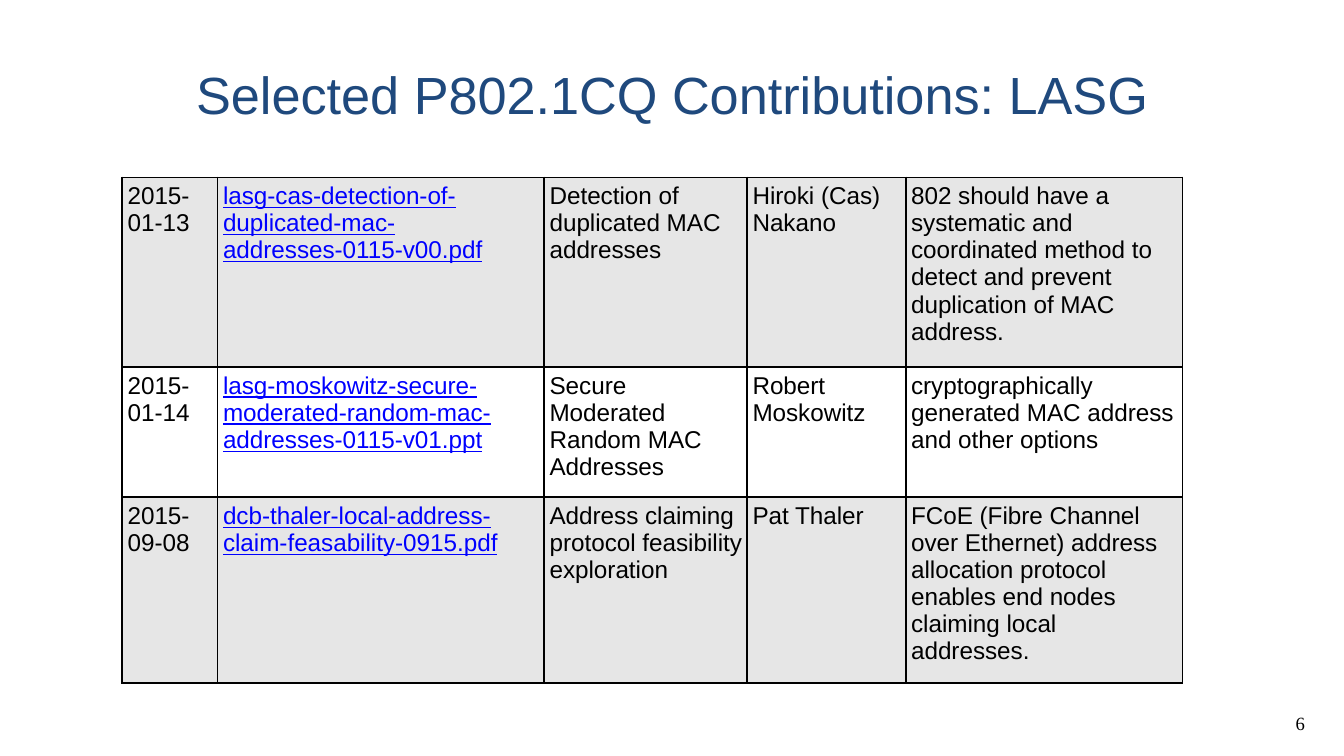
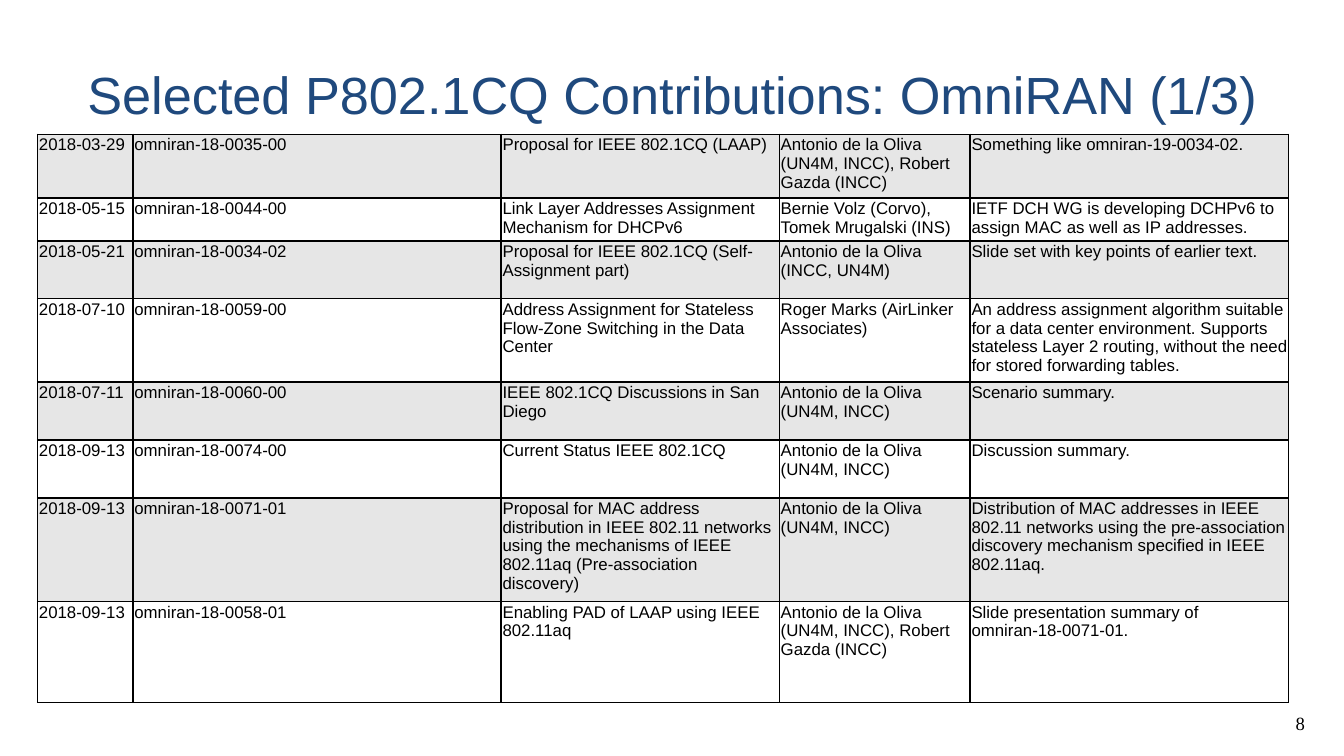
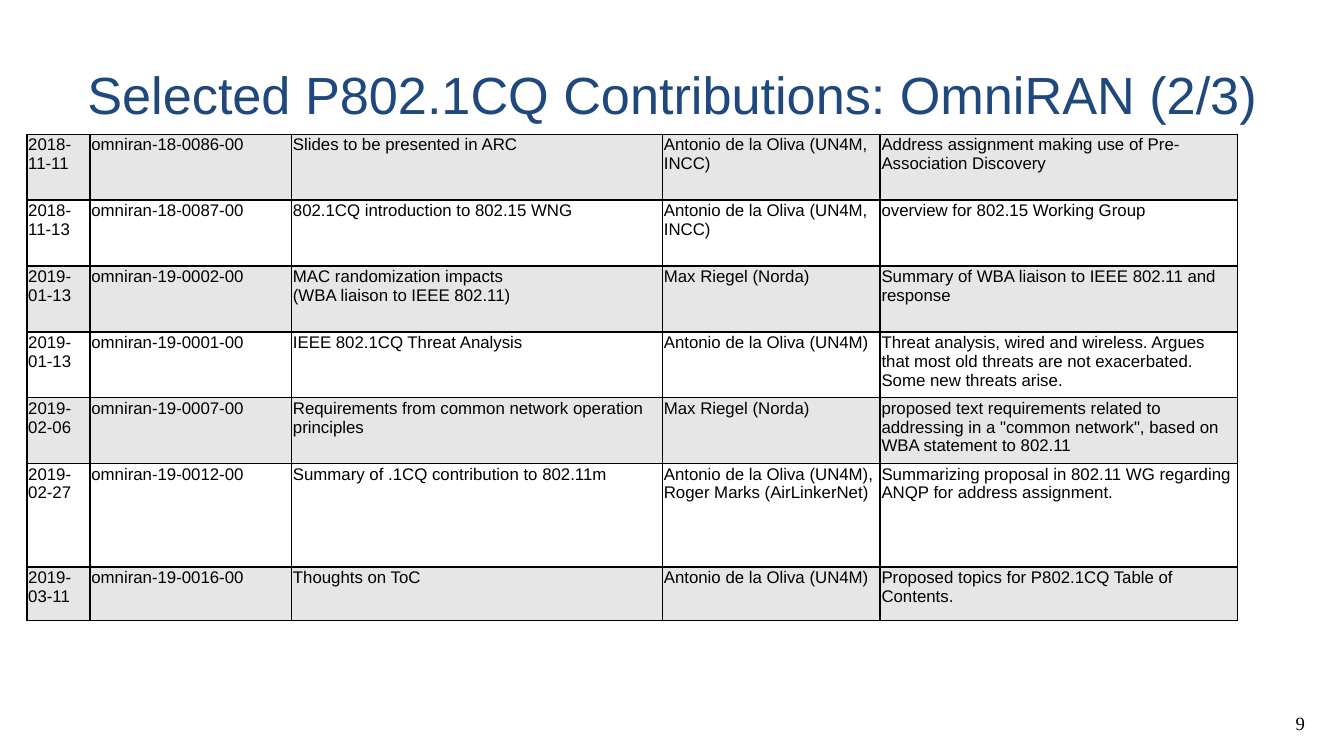
from itertools import product

from lxml.etree import SubElement
from pptx import Presentation
from pptx.dml.color import RGBColor
from pptx.enum.text import MSO_ANCHOR as Anchor, MSO_AUTO_SIZE as AutoSize, PP_ALIGN as Align
from pptx.oxml.ns import qn
from pptx.util import Inches, Pt

COLORS = {"title": "1F497D", "text": "000000", "link": "0000FF", "border": "000000",
          "odd": "E6E6E6", "even": "FFFFFF"}
FONTS = {"body": "Arial", "number": "Times New Roman"}
TITLE = "Selected P802.1CQ Contributions: "
WIDTH = 10
HEIGHT = WIDTH * 9 / 16
BOX_INSET = 0.05

LASG = [
    ("2015-01-13", "lasg-cas-detection-of-duplicated-mac-addresses-0115-v00.pdf",
     "Detection of\nduplicated MAC addresses", "Hiroki (Cas) Nakano",
     "802 should have a systematic and coordinated method to detect and prevent "
     "duplication of MAC address."),
    ("2015-01-14", "lasg-moskowitz-secure-moderated-random-mac-addresses-0115-v01.ppt",
     "Secure Moderated Random MAC Addresses", "Robert Moskowitz",
     "cryptographically generated MAC address and other options"),
    ("2015-09-08", "dcb-thaler-local-address-claim-feasability-0915.pdf",
     "Address claiming \nprotocol feasibility \nexploration", "Pat Thaler",
     "FCoE (Fibre Channel over Ethernet) address allocation protocol enables end nodes "
     "claiming local addresses."),
]
OMNIRAN_1 = [
    ("2018-03-29", "omniran-18-0035-00", "Proposal for IEEE 802.1CQ (LAAP)",
     "Antonio de la Oliva (UN4M, INCC), Robert Gazda (INCC)",
     "Something like omniran-19-0034-02."),
    ("2018-05-15", "omniran-18-0044-00", "Link Layer Addresses Assignment Mechanism for DHCPv6",
     "Bernie Volz (Corvo), Tomek Mrugalski (INS)",
     "IETF DCH WG is developing DCHPv6 to assign MAC as well as IP addresses."),
    ("2018-05-21", "omniran-18-0034-02", "Proposal for IEEE 802.1CQ (Self-Assignment part)",
     "Antonio de la Oliva (INCC, UN4M)", "Slide set with key points of earlier text."),
    ("2018-07-10", "omniran-18-0059-00",
     "Address Assignment for Stateless Flow-Zone Switching in the Data Center",
     "Roger Marks (AirLinker Associates)",
     "An address assignment algorithm suitable for a data center environment. Supports "
     "stateless Layer 2 routing, without the need for stored forwarding tables."),
    ("2018-07-11", "omniran-18-0060-00", "IEEE 802.1CQ Discussions in San Diego",
     "Antonio de la Oliva (UN4M, INCC)", "Scenario summary."),
    ("2018-09-13", "omniran-18-0074-00", "Current Status IEEE 802.1CQ",
     "Antonio de la Oliva (UN4M, INCC)", "Discussion summary."),
    ("2018-09-13", "omniran-18-0071-01",
     "Proposal for MAC address distribution in IEEE 802.11 networks using the mechanisms "
     "of IEEE 802.11aq (Pre-association discovery)",
     "Antonio de la Oliva (UN4M, INCC)",
     "Distribution of MAC addresses in IEEE 802.11 networks using the pre-association "
     "discovery mechanism specified in IEEE 802.11aq."),
    ("2018-09-13", "omniran-18-0058-01", "Enabling PAD of LAAP using IEEE 802.11aq",
     "Antonio de la Oliva (UN4M, INCC), Robert Gazda (INCC)",
     "Slide presentation summary of omniran-18-0071-01."),
]
OMNIRAN_2 = [
    ("2018-11-11", "omniran-18-0086-00", "Slides to be presented in ARC",
     "Antonio de la Oliva (UN4M, INCC)",
     "Address assignment making use of Pre-Association Discovery"),
    ("2018-11-13", "omniran-18-0087-00", "802.1CQ introduction to 802.15 WNG",
     "Antonio de la Oliva (UN4M, INCC)", "overview for 802.15 Working Group"),
    ("2019-01-13", "omniran-19-0002-00",
     "MAC randomization impacts\n(WBA liaison to IEEE 802.11)", "Max Riegel (Norda)",
     "Summary of WBA liaison to IEEE 802.11 and response"),
    ("2019-01-13", "omniran-19-0001-00", "IEEE 802.1CQ Threat Analysis",
     "Antonio de la Oliva (UN4M)",
     "Threat analysis, wired and wireless. Argues that most old threats are not "
     "exacerbated. Some new threats arise."),
    ("2019-02-06", "omniran-19-0007-00",
     "Requirements from common network operation principles", "Max Riegel (Norda)",
     'proposed text requirements related to addressing in a "common network", based on '
     "WBA statement to 802.11"),
    ("2019-02-27", "omniran-19-0012-00", "Summary of .1CQ contribution to 802.11m",
     "Antonio de la Oliva (UN4M), Roger Marks (AirLinkerNet)",
     "Summarizing proposal in 802.11 WG regarding ANQP for address assignment."),
    ("2019-03-11", "omniran-19-0016-00", "Thoughts on ToC", "Antonio de la Oliva (UN4M)",
     "Proposed topics for P802.1CQ Table of Contents."),
]
PAGES = [
    {"number": 6, "group": "LASG", "entries": LASG, "origin": (0.91, 1.32), "height": 3.76,
     "columns": [0.71, 2.43, 1.51, 1.18, 2.06], "rows": [1.41, 0.97, 1.19],
     "size": 13, "inset": 0.04, "linked": True},
    {"number": 8, "group": "OmniRAN (1/3)", "entries": OMNIRAN_1, "origin": (0.28, 1),
     "height": 4.25, "columns": [0.71, 2.74, 2.07, 1.42, 2.37],
     "rows": [0.46, 0, 0.43, 0.51, 0.43, 0.43, 0.75, 0.75],
     "size": 9, "inset": 0.01, "linked": False},
    {"number": 9, "group": "OmniRAN (2/3)", "entries": OMNIRAN_2, "origin": (0.2, 1),
     "height": 3.63, "columns": [0.47, 1.5, 2.76, 1.62, 2.66],
     "rows": [0.49] * 5 + [0.77, 0.4], "size": 9, "inset": 0.01, "linked": False},
]


def color(name):
    return RGBColor.from_string(COLORS[name])


def write(text_frame, text, size, ink="text", font="body", align=Align.LEFT, underline=False):
    text_frame.text = text
    for paragraph in text_frame.paragraphs:
        paragraph.alignment = align
        for run in paragraph.runs:
            run.font.size = Pt(size)
            run.font.name = FONTS[font]
            run.font.color.rgb = color(ink)
            run.font.underline = underline


def set_margins(target, inset):
    for side in ("left", "top", "right", "bottom"):
        setattr(target, f"margin_{side}", Inches(inset))


def add_text(slide, box, text, size, wrap=True, **style):
    text_frame = slide.shapes.add_textbox(*map(Inches, box)).text_frame
    set_margins(text_frame, BOX_INSET)
    text_frame.word_wrap = wrap
    text_frame.auto_size = AutoSize.NONE if wrap else AutoSize.SHAPE_TO_FIT_TEXT
    text_frame.vertical_anchor = Anchor.MIDDLE if wrap else Anchor.TOP
    write(text_frame, text, size, **style)


def add_borders(cell):
    properties = cell._tc.get_or_add_tcPr()
    for side in "LRTB":
        line = SubElement(properties, qn(f"a:ln{side}"), w=str(Pt(1)))
        fill = SubElement(line, qn("a:solidFill"))
        SubElement(fill, qn("a:srgbClr"), val=COLORS["border"])


def add_contributions(slide, page):
    columns, rows = page["columns"], page["rows"]
    box = (*page["origin"], sum(columns), page["height"])
    frame = slide.shapes.add_table(len(rows), len(columns), *map(Inches, box))
    table = frame.table
    table.first_row = table.horz_banding = False
    for column, width in zip(table.columns, columns):
        column.width = Inches(width)
    for row, height in zip(table.rows, rows):
        row.height = Inches(height)
    frame.height = Inches(page["height"])
    for row, column in product(range(len(rows)), range(len(columns))):
        cell = table.cell(row, column)
        linked = page["linked"] and column == 1
        set_margins(cell, page["inset"])
        add_borders(cell)
        cell.fill.solid()
        cell.fill.fore_color.rgb = color("even" if row % 2 else "odd")
        write(cell.text_frame, page["entries"][row][column], page["size"],
              ink="link" if linked else "text", underline=linked)


def main():
    """Build the slides that list the selected contributions."""
    presentation = Presentation()
    presentation.slide_width, presentation.slide_height = Inches(WIDTH), Inches(HEIGHT)
    for page in PAGES:
        slide = presentation.slides.add_slide(presentation.slide_layouts[6])
        add_text(slide, (9.58, 5.25, 0.18, 0.25), str(page["number"]), 10, wrap=False,
                 font="number", align=Align.RIGHT)
        add_text(slide, (0.05 * WIDTH, 0.23, 0.9 * WIDTH, 0.94), TITLE + page["group"], 28,
                 ink="title", align=Align.CENTER)
        add_contributions(slide, page)
    presentation.save("out.pptx")


if __name__ == "__main__":
    main()
